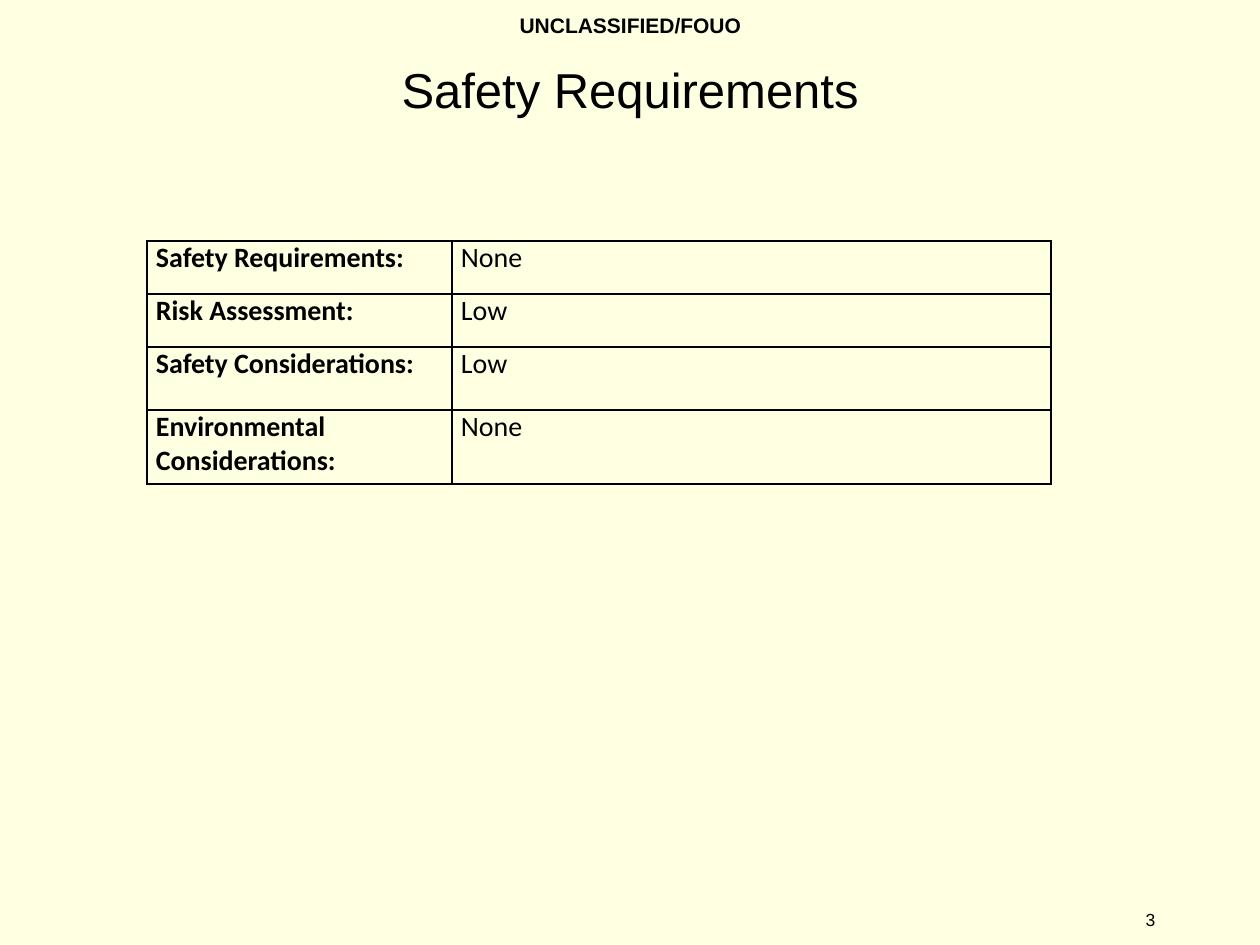
"""Build the safety requirements slide."""
from lxml.etree import SubElement
from pptx import Presentation
from pptx.dml.color import RGBColor
from pptx.enum.text import MSO_ANCHOR, PP_ALIGN
from pptx.oxml.ns import qn
from pptx.util import Emu, Pt

COLORS = {"background": "FFFFE2", "ink": "000000"}
LABELS = [
    ("UNCLASSIFIED/FOUO", (431, 0, 399, 50), 12, True, MSO_ANCHOR.MIDDLE),
    ("3", (1061, 895, 179, 50), 10, False, MSO_ANCHOR.MIDDLE),
    ("Safety Requirements", (0, 53, 1260, 116), 28, False, MSO_ANCHOR.TOP),
]
ROWS = [
    ("Safety Requirements:", "None"),
    ("Risk Assessment:", "Low"),
    ("Safety Considerations:", "Low"),
    ("Environmental Considerations:", "None"),
]
TABLE_LEFT, TABLE_TOP = 147, 241
COLUMN_WIDTHS = [305, 599]
ROW_HEIGHTS = [53, 53, 63, 74]


def px(length):
    """Turn pixels into EMU."""
    return Emu(round(length * 914400 / 126))


def add_text(para, text, font, size, bold):
    """Add one formatted run."""
    span = para.add_run()
    span.text = text
    span.font.name = font
    span.font.size = Pt(size)
    span.font.bold = bold
    span.font.color.rgb = RGBColor.from_string(COLORS["ink"])


def add_label(page, text, place, size, bold, anchor):
    """Add a centred text box."""
    frame = page.shapes.add_textbox(*map(px, place)).text_frame
    frame.word_wrap = True
    frame.vertical_anchor = anchor
    para = frame.paragraphs[0]
    para.alignment = PP_ALIGN.CENTER
    add_text(para, text, "Arial", size, bold)


def add_borders(cell):
    """Draw a thin line on every side of a cell."""
    properties = cell._tc.get_or_add_tcPr()
    for position, side in enumerate(("lnL", "lnR", "lnT", "lnB")):
        line = SubElement(properties, qn(f"a:{side}"), w=str(Pt(1)))
        fill = SubElement(line, qn("a:solidFill"))
        SubElement(fill, qn("a:srgbClr"), val=COLORS["ink"])
        properties.insert(position, line)


def add_requirements(page):
    """Add the table of requirements."""
    size = px(sum(COLUMN_WIDTHS)), px(sum(ROW_HEIGHTS))
    table = page.shapes.add_table(
        len(ROWS), len(COLUMN_WIDTHS), px(TABLE_LEFT), px(TABLE_TOP), *size
    ).table
    table.first_row = table.horz_banding = False
    for column, width in zip(table.columns, COLUMN_WIDTHS):
        column.width = px(width)
    for row, height, texts in zip(table.rows, ROW_HEIGHTS, ROWS):
        row.height = px(height)
        for index, (cell, text) in enumerate(zip(row.cells, texts)):
            cell.margin_left = cell.margin_right = px(9)
            cell.margin_top = cell.margin_bottom = 0
            cell.fill.background()
            add_borders(cell)
            add_text(cell.text_frame.paragraphs[0], text, "Calibri", 16, index == 0)


def main():
    """Build and save the deck."""
    deck = Presentation()
    deck.slide_width, deck.slide_height = px(1260), px(945)
    page = deck.slides.add_slide(deck.slide_layouts[6])
    page.background.fill.solid()
    page.background.fill.fore_color.rgb = RGBColor.from_string(COLORS["background"])
    for label in LABELS:
        add_label(page, *label)
    add_requirements(page)
    deck.save("out.pptx")


if __name__ == "__main__":
    main()
